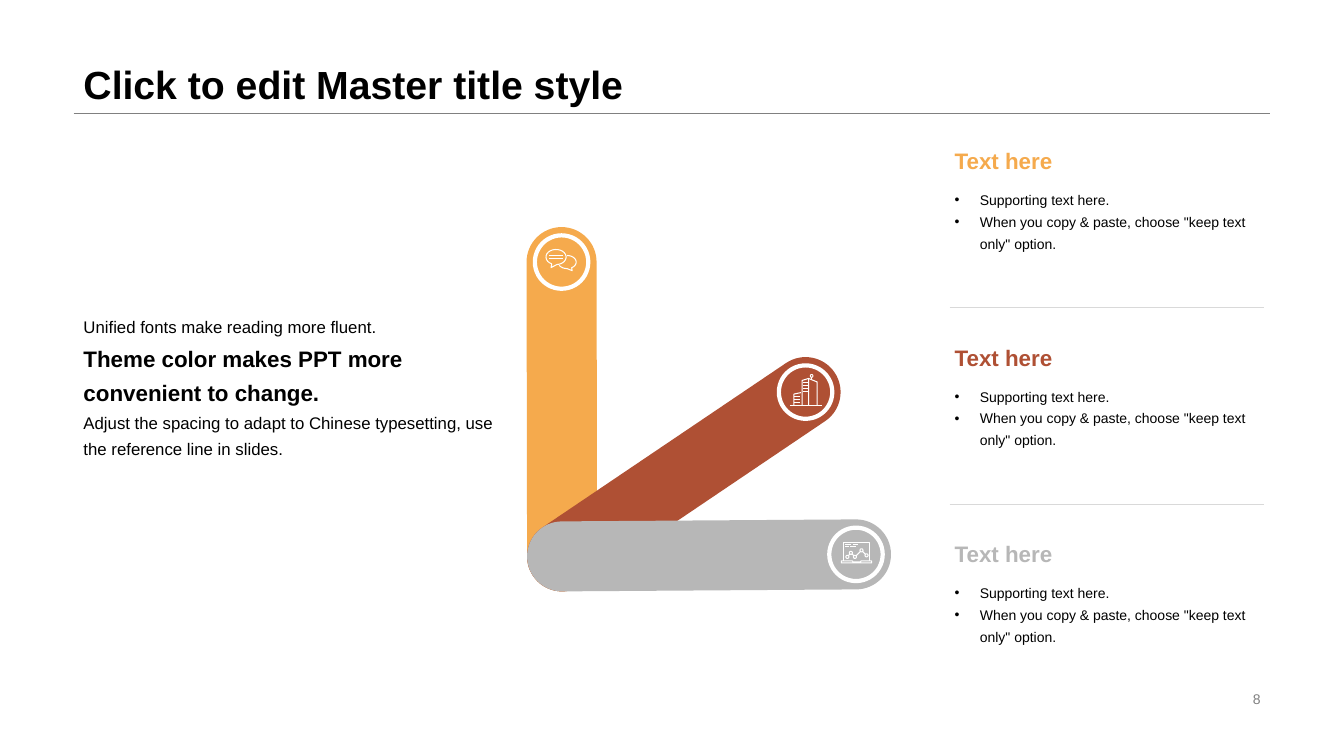
from math import cos, hypot, radians, sin
from lxml.etree import SubElement
from pptx import Presentation
from pptx.dml.color import RGBColor
from pptx.enum.shapes import MSO_CONNECTOR, MSO_SHAPE
from pptx.enum.text import MSO_ANCHOR, PP_ALIGN
from pptx.oxml.ns import qn
from pptx.util import Emu, Inches, Pt

CELL = Inches(0.1)
ORANGE, RUST, GREY, WHITE = "F5AA4D", "AF5034", "B7B7B7", "FFFFFF"


def rgb(value):
    return RGBColor.from_string(value)


def arc(cx, cy, rx, ry, start=0, stop=360):
    angles = [radians(a) for a in range(start, stop + 1, 15)]
    return [(cx + rx * cos(a), cy + ry * sin(a)) for a in angles]


def bars(left, right, heights):
    return [[(left, y), (right, y)] for y in heights]


def link(a, b, gap):
    dist = hypot(b[0] - a[0], b[1] - a[1])
    dx, dy = (gap * (b[i] - a[i]) / dist for i in (0, 1))
    return [(a[0] + dx, a[1] + dy), (b[0] - dx, b[1] - dy)]


def chat_icon():
    front = arc(1.05, 0.8, 1, 0.75, 115, 445) + [(0.55, 1.85), (0.63, 1.48)]
    back = arc(2.15, 1.3, 0.9, 0.65, -90, 60) + [(2.65, 2.15)]
    back += arc(2.15, 1.3, 0.9, 0.65, 90, 150)
    return [front, back] + bars(0.4, 1.75, (0.65, 0.95))


def city_icon():
    low = [(0.35, 3.1), (0.35, 2), (1.05, 1.85)]
    middle = [(1.15, 3.1), (1.15, 0.65), (1.8, 0.45), (1.8, 3.1)]
    tall = [(1.8, 0.45), (2.65, 0.8), (2.65, 3.1)]
    mast = [(2.1, 0.35), (2.1, 0.55)]
    windows = bars(0.4, 0.95, (2.25, 2.55, 2.85))
    windows += bars(1.25, 1.7, (0.85, 1.15, 1.45, 1.75))
    ground = bars(0, 3.1, (3.1,))
    return [low, middle, tall, mast, arc(2.1, 0.2, 0.13, 0.13)] + windows + ground


def laptop_icon():
    screen = [(0.25, 1.85), (0.25, 0.05), (2.85, 0.05), (2.85, 1.85)]
    base = [(0.05, 1.85), (1.15, 1.85), (1.2, 1.95), (1.95, 1.95),
            (2, 1.85), (3.05, 1.85), (3.05, 2.05), (0.05, 2.05), (0.05, 1.85)]
    dots = [(0.65, 1.45), (1, 1.05), (1.4, 1.45), (2.05, 0.8), (2.55, 1.3)]
    rings = [arc(x, y, 0.15, 0.15) for x, y in dots]
    links = [link(a, b, 0.15) for a, b in zip(dots, dots[1:])]
    words = bars(0.45, 1.05, (0.27,)) + bars(1.25, 1.7, (0.27,))
    words += bars(0.45, 0.8, (0.47,)) + bars(0.95, 1.5, (0.47,))
    return [screen, base] + rings + links + words


class Deck:
    """Hold the style and current slide, measured in cells of a tenth of an inch."""

    font = "Arial"

    def __init__(self, prs):
        self.slide = prs.slides.add_slide(prs.slide_layouts[6])
        self.shapes = self.slide.shapes

    def cells(self, *values):
        return [Emu(round(v * CELL)) for v in values]

    def line(self, start, end, color, width, cap="flat"):
        s = self.shapes.add_connector(MSO_CONNECTOR.STRAIGHT, *self.cells(*start, *end))
        s.line.color.rgb = rgb(color)
        s.line.width = Pt(width)
        s.line._get_or_add_ln().set("cap", cap)
        SubElement(s._element.spPr, qn("a:effectLst"))

    def disc(self, center, size, color):
        x, y = center
        s = self.shapes.add_shape(
            MSO_SHAPE.OVAL, *self.cells(x - size / 2, y - size / 2, size, size))
        s.shadow.inherit = False
        s.fill.solid()
        s.fill.fore_color.rgb = rgb(color)
        s.line.color.rgb = rgb(WHITE)
        s.line.width = Pt(3)

    def icon(self, origin, strokes):
        paths = [[self.cells(*pt) for pt in stroke] for stroke in strokes]
        builder = self.shapes.build_freeform(*paths[0][0])
        builder.add_line_segments(paths[0][1:], close=False)
        for first, *rest in paths[1:]:
            builder.move_to(*first)
            builder.add_line_segments(rest, close=False)
        s = builder.convert_to_shape(*self.cells(*origin))
        s.shadow.inherit = False
        s.fill.background()
        s.line.color.rgb = rgb(WHITE)
        s.line.width = Pt(0.75)

    def bullet(self, p):
        pPr = p._p.get_or_add_pPr()
        indent = Inches(0.25)
        pPr.set("marL", str(indent))
        pPr.set("indent", str(-indent))
        SubElement(pPr, qn("a:buFont"), typeface=self.font)
        SubElement(pPr, qn("a:buChar"), char="•")
        tabs = SubElement(pPr, qn("a:tabLst"))
        SubElement(tabs, qn("a:tab"), pos=str(indent), algn="l")

    def text(self, box, paragraphs, anchor=MSO_ANCHOR.TOP, spacing=1.0,
             align=PP_ALIGN.LEFT, bullets=False):
        tf = self.shapes.add_textbox(*self.cells(*box)).text_frame
        tf.word_wrap = True
        tf.vertical_anchor = anchor
        for i, (content, size, bold, color) in enumerate(paragraphs):
            p = tf.add_paragraph() if i else tf.paragraphs[0]
            if bullets:
                self.bullet(p)
            for name, value in {"alignment": align, "line_spacing": spacing}.items():
                setattr(p, name, value)
            r = p.add_run()
            r.text = content
            style = {"name": self.font, "size": Pt(size), "bold": bold}
            for name, value in style.items():
                setattr(r.font, name, value)
            r.font.color.rgb = rgb(color)


def main():
    prs = Presentation()
    prs.slide_width, prs.slide_height = Inches(13.33), Inches(7.5)
    deck = Deck(prs)
    black = "000000"

    deck.line((7.3, 11.2), (126, 11.2), "808080", 0.25)
    deck.text((7.3, 0, 118.7, 11.2), [("Click to edit Master title style", 28, True, black)],
              MSO_ANCHOR.BOTTOM, 0.9)
    deck.text((94.2, 68.2, 31.8, 2.3), [("8", 10, False, "808080")],
              MSO_ANCHOR.MIDDLE, align=PP_ALIGN.RIGHT)

    hub = (55.75, 55.2)
    arms = [
        (ORANGE, (55.7, 26), (54.1, 24.7), chat_icon()),
        (RUST, (79.9, 38.9), (78.4, 37.1), city_icon()),
        (GREY, (84.9, 55), (83.4, 53.8), laptop_icon()),
    ]
    row_step = 19.5
    for i, (color, tip, icon_at, strokes) in enumerate(arms):
        deck.line(hub, tip, color, 50, "rnd")
        deck.disc(tip, 5.3, color)
        deck.icon(icon_at, strokes)
        top = 13.9 + i * row_step
        deck.text((93.7, top, 31.8, 4.1), [("Text here", 16, True, color)], MSO_ANCHOR.MIDDLE)
        notes = ("Supporting text here.",
                 'When you copy & paste, choose "keep text only" option.')
        deck.text((93.7, top + 4.1, 31.8, 9.5), [(note, 10, False, black) for note in notes],
                  spacing=1.3, bullets=True)
        if i:
            deck.line((94.2, top - 2.9), (125.4, top - 2.9), "D9D9D9", 0.25)

    deck.text((7.3, 30.3, 43.6, 16.9), [
        ("Unified fonts make reading more fluent.", 12, False, black),
        ("Theme color makes PPT more convenient to change.", 16, True, black),
        ("Adjust the spacing to adapt to Chinese typesetting, "
         "use the reference line in slides.", 12, False, black),
    ], spacing=1.3)
    prs.save("out.pptx")


if __name__ == "__main__":
    main()
